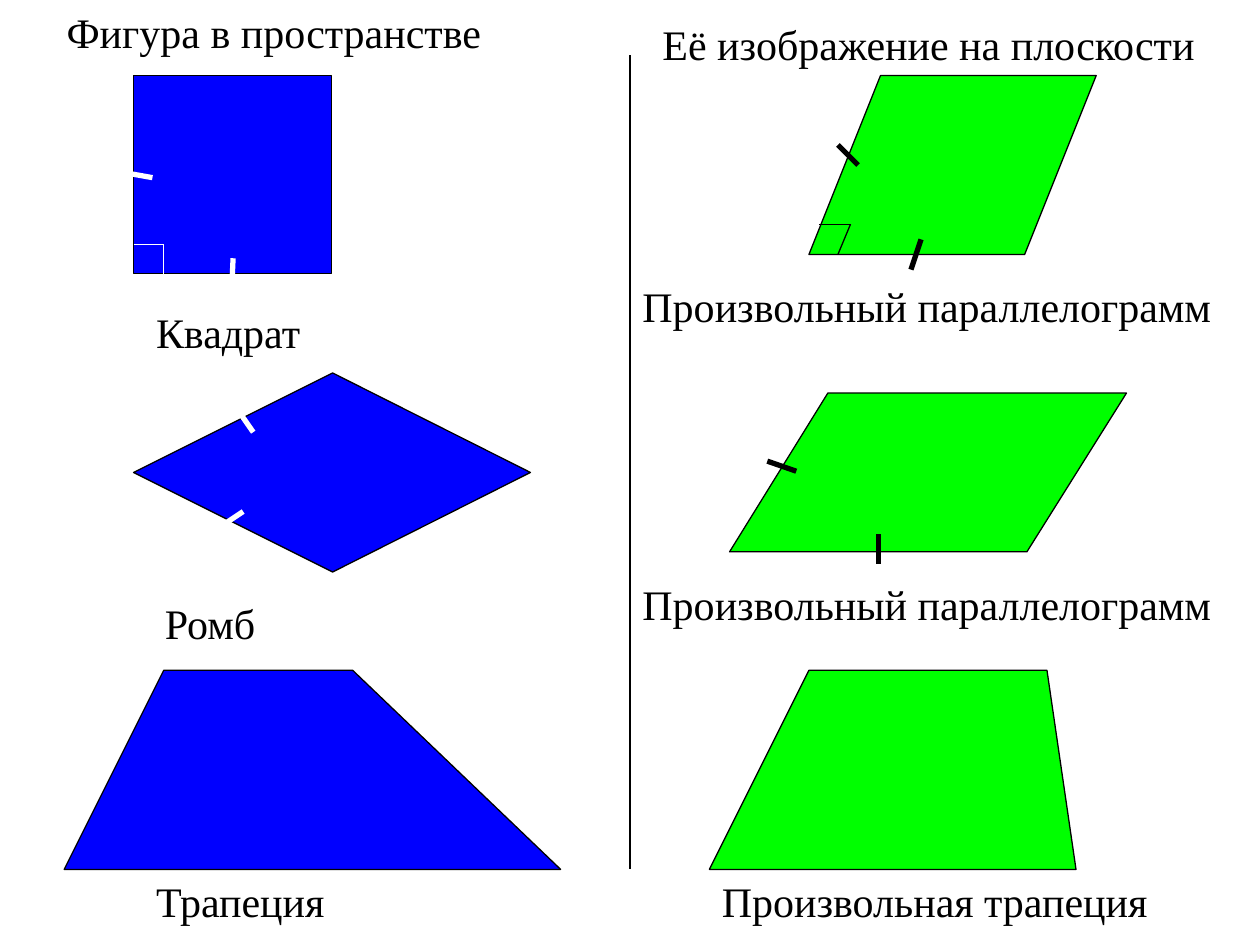
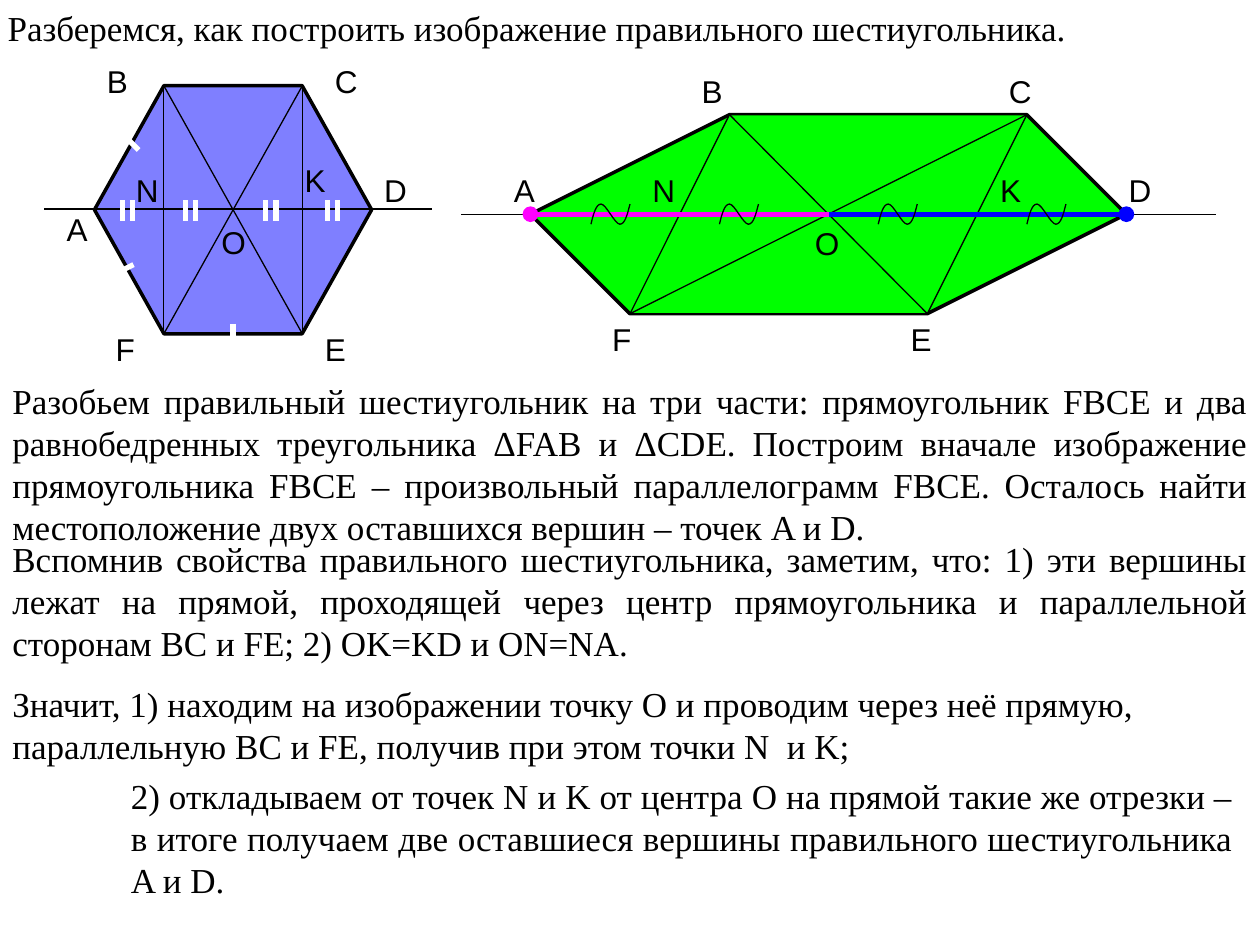
from lxml import etree
from pptx import Presentation
from pptx.dml.color import RGBColor
from pptx.enum.shapes import MSO_CONNECTOR, MSO_SHAPE
from pptx.enum.text import MSO_ANCHOR, PP_ALIGN
from pptx.oxml.ns import qn
from pptx.util import Inches, Pt

STRAIGHT = MSO_CONNECTOR.STRAIGHT
RECTANGLE = MSO_SHAPE.RECTANGLE
PARALLELOGRAM = MSO_SHAPE.PARALLELOGRAM
HEXAGON = MSO_SHAPE.HEXAGON
TOP = MSO_ANCHOR.TOP
LEFT = PP_ALIGN.LEFT
JUSTIFY = PP_ALIGN.JUSTIFY

COLORS = {
    "ink": "000000",
    "mark": "FFFFFF",
    "figure": "0000FF",
    "image": "00FF00",
    "left_half": "FF00FF",
    "right_half": "0000FF",
}
SERIF = "Times New Roman"
SANS = "Arial"
THIN, EDGE, BOLD = 0.75, 2, 3
TITLE_ONLY, BLANK = 5, 6

# Control points of the wavy equality mark, relative to its top left corner
WAVE = [(0, 0.16), (0.02, 0.08), (0.04, 0), (0.08, 0), (0.12, 0),
        (0.19, 0.16), (0.23, 0.16), (0.27, 0.16), (0.29, 0.08), (0.31, 0)]


def rgb(name):
    return RGBColor.from_string(COLORS[name])


def place(shape, left, top, width, height):
    shape.left, shape.top = Inches(left), Inches(top)
    shape.width, shape.height = Inches(width), Inches(height)


def write_text(shape, text, size=20, font=SERIF, align=LEFT):
    frame = shape.text_frame
    frame.word_wrap = True
    frame.vertical_anchor = TOP
    paragraph = frame.paragraphs[0]
    paragraph.alignment = align
    run = paragraph.add_run()
    run.text = text
    run.font.size = Pt(size)
    run.font.name = font
    run.font.color.rgb = rgb("ink")


def add_text(slide, text, left, top, width, height, **text_format):
    box = slide.shapes.add_textbox(0, 0, 0, 0)
    place(box, left, top, width, height)
    write_text(box, text, **text_format)


def add_segment(slide, start, end, color="ink", width=THIN, dots=()):
    """Draw a line; dots lists the ends (headEnd, tailEnd) that carry a point."""
    ends = [Inches(value) for value in (*start, *end)]
    segment = slide.shapes.add_connector(STRAIGHT, *ends)
    segment.line.color.rgb = rgb(color)
    segment.line.width = Pt(width)
    properties = segment.element.spPr
    for dot in dots:
        etree.SubElement(properties.find(qn("a:ln")), qn(f"a:{dot}"), type="oval")
    etree.SubElement(properties, qn("a:effectLst"))


def paint(shape, fill, width):
    shape.shadow.inherit = False
    if fill:
        shape.fill.solid()
        shape.fill.fore_color.rgb = rgb(fill)
    else:
        shape.fill.background()
    shape.line.color.rgb = rgb("ink")
    shape.line.width = Pt(width)


def add_preset(slide, kind, box, fill, adjust=None, width=THIN):
    shape = slide.shapes.add_shape(kind, 0, 0, 0, 0)
    place(shape, *box)
    if adjust is not None:
        shape.adjustments[0] = adjust
    paint(shape, fill, width)
    return shape


def add_outline(slide, points, fill=None, width=THIN, close=True):
    corners = [(Inches(x), Inches(y)) for x, y in points]
    builder = slide.shapes.build_freeform(*corners[0], scale=1.0)
    builder.add_line_segments(corners[1:], close=close)
    paint(builder.convert_to_shape(), fill, width)


def set_opacity(shape, percent):
    fill_color = shape.element.spPr.find(f"{qn('a:solidFill')}/{qn('a:srgbClr')}")
    etree.SubElement(fill_color, qn("a:alpha"), val=str(percent * 1000))


def bezier(controls, steps=8):
    """Sample a chain of cubic curves that share their end points."""
    points = [controls[0]]
    for first in range(0, len(controls) - 1, 3):
        curve = controls[first:first + 4]
        for step in range(1, steps + 1):
            t = step / steps
            weights = ((1 - t) ** 3, 3 * t * (1 - t) ** 2, 3 * t * t * (1 - t), t ** 3)
            points.append(tuple(sum(w * point[axis] for w, point in zip(weights, curve))
                                for axis in (0, 1)))
    return points


def add_wave(slide, left, top):
    add_outline(slide, [(left + x, top + y) for x, y in bezier(WAVE)], close=False)


def add_vertex_labels(slide, labels, width=0.47):
    for letter, (left, top) in labels.items():
        add_text(slide, letter, left, top, width, 0.4, size=18, font=SANS)


def add_diagonals(slide, vertices, names):
    for start, end in names:
        add_segment(slide, vertices[start], vertices[end])


def build_comparison(slide):
    add_segment(slide, (5, 0.44), (5, 6.9))

    add_preset(slide, RECTANGLE, (1.06, 0.6, 1.57, 1.57), "figure")
    add_preset(slide, PARALLELOGRAM, (6.42, 0.6, 2.28, 1.42), "image", 0.4)
    rhombus = [(1.06, 3.75), (2.64, 2.96), (4.21, 3.75), (2.64, 4.54)]
    parallelogram = [(5.79, 4.38), (6.57, 3.12), (8.94, 3.12), (8.15, 4.38)]
    trapezoid = [(0.51, 6.9), (1.3, 5.32), (2.8, 5.32), (4.45, 6.9)]
    trapezoid_image = [(5.63, 6.9), (6.42, 5.32), (8.31, 5.32), (8.54, 6.9)]
    for corners, fill in ((rhombus, "figure"), (parallelogram, "image"),
                          (trapezoid, "figure"), (trapezoid_image, "image")):
        add_outline(slide, corners, fill)

    right_angles = [
        ("mark", (1.06, 1.94), (1.3, 1.94), (1.3, 2.18)),
        ("ink", (6.5, 1.78), (6.75, 1.78), (6.65, 2.02)),
    ]
    for color, side, corner, base in right_angles:
        add_segment(slide, side, corner, color)
        add_segment(slide, corner, base, color)

    equal_sides = {
        "mark": [((0.93, 1.36), (1.21, 1.41)), ((1.85, 2.05), (1.84, 2.27)),
                 ((1.93, 4.06), (1.69, 4.22)), ((1.85, 3.2), (2.01, 3.43))],
        "ink": [((6.65, 1.15), (6.81, 1.31)), ((7.31, 1.9), (7.23, 2.14)),
                ((6.09, 3.66), (6.32, 3.74)), ((6.97, 4.24), (6.97, 4.48))],
    }
    for color, ticks in equal_sides.items():
        for start, end in ticks:
            add_segment(slide, start, end, color, BOLD)

    captions = [
        ("Фигура в пространстве", 0.43, 0, 3.94),
        ("Её изображение на плоскости", 5.16, 0.1, 4.64),
        ("Квадрат", 1.14, 2.38, 2.36),
        ("Произвольный параллелограмм", 5, 2.18, 4.79),
        ("Ромб", 1.21, 4.69, 2.3),
        ("Произвольный параллелограмм", 5, 4.54, 4.79),
        ("Трапеция", 1.14, 6.9, 2.6),
        ("Произвольная трапеция", 5.63, 6.9, 3.78),
    ]
    for text, left, top, width in captions:
        add_text(slide, text, left, top, width, 0.51, size=24)


def draw_regular_hexagon(slide):
    hexagon = add_preset(slide, HEXAGON, (0.75, 0.68, 2.2, 1.97), "figure", 0.28, EDGE)
    set_opacity(hexagon, 50)
    vertices = {"B": (1.3, 0.68), "C": (2.4, 0.68), "E": (2.4, 2.65), "F": (1.3, 2.65)}
    add_diagonals(slide, vertices, ("BF", "CE", "CF", "BE"))
    add_segment(slide, (0.35, 1.66), (3.43, 1.66))

    side_ticks = [((0.98, 1.07), (1.1, 1.19)), ((1.06, 2.1), (0.9, 2.18)),
                  ((1.85, 2.57), (1.85, 2.73))]
    axis_ticks = [((x, 1.59), (x, 1.75))
                  for left in (0.97, 1.47, 2.11, 2.6) for x in (left, left + 0.08)]
    for start, end in side_ticks + axis_ticks:
        add_segment(slide, start, end, "mark", BOLD)

    add_vertex_labels(slide, {
        "A": (0.43, 1.62), "B": (0.75, 0.44), "C": (2.56, 0.44), "D": (2.95, 1.31),
        "E": (2.48, 2.57), "F": (0.82, 2.57), "O": (1.66, 1.72), "K": (2.32, 1.23),
        "N": (0.98, 1.31)})


def draw_hexagon_image(slide):
    axis_y = 1.7
    vertices = {"A": (4.21, axis_y), "B": (5.79, 0.91), "C": (8.15, 0.91),
                "D": (8.94, axis_y), "E": (7.36, 2.49), "F": (5, 2.49)}
    add_outline(slide, list(vertices.values()), "image", EDGE)
    add_preset(slide, PARALLELOGRAM, (5, 0.91, 3.15, 1.58), "image", 0.5)
    add_diagonals(slide, vertices, ("BE", "FC"))
    add_segment(slide, (3.66, axis_y), (9.65, axis_y))

    add_vertex_labels(slide, {
        "A": (3.98, 1.31), "B": (5.47, 0.52), "C": (7.91, 0.52), "D": (8.86, 1.31),
        "E": (7.13, 2.49), "F": (4.76, 2.49), "O": (6.37, 1.73), "K": (7.84, 1.31),
        "N": (5.08, 1.31)})

    center = (6.58, axis_y)
    add_segment(slide, center, vertices["D"], "right_half", BOLD, ["tailEnd"])
    add_segment(slide, vertices["A"], center, "left_half", BOLD, ["headEnd"])
    for left in (4.69, 5.71, 6.97, 8.15):
        add_wave(slide, left, 1.62)


def build_hexagon_construction(slide):
    title = slide.shapes.title
    place(title, -0.04, 0, 10, 0.44)
    write_text(title, "Разберемся, как построить изображение правильного шестиугольника.")

    draw_regular_hexagon(slide)
    draw_hexagon_image(slide)

    explanation = [
        ("Разобьем правильный шестиугольник на три части: прямоугольник FBCE и два "
         "равнобедренных треугольника ΔFAB и ΔCDE. Построим вначале изображение "
         "прямоугольника FBCE – произвольный параллелограмм FBCE. Осталось найти "
         "местоположение двух оставшихся вершин – точек A и D.",
         0, 2.96, 10, 1.45, JUSTIFY),
        ("Вспомнив свойства правильного шестиугольника, заметим, что: 1) эти вершины "
         "лежат на прямой, проходящей через центр прямоугольника и параллельной "
         "сторонам BC и FE; 2) OK=KD и ON=NA.",
         0, 4.22, 10, 1.11, JUSTIFY),
        ("Значит, 1) находим на изображении точку О и проводим через неё прямую, "
         "параллельную BC и FE, получив при этом точки N  и K;",
         0, 5.37, 10, 0.77, LEFT),
        ("2) откладываем от точек N и K от центра О на прямой такие же отрезки – "
         "в итоге получаем две оставшиеся вершины правильного шестиугольника A и D.",
         0.94, 6.1, 8.94, 1.11, JUSTIFY),
    ]
    for text, left, top, width, height, align in explanation:
        add_text(slide, text, left, top, width, height, align=align)


def main():
    deck = Presentation()
    deck.slide_width, deck.slide_height = Inches(10), Inches(7.5)
    for layout, build in ((BLANK, build_comparison),
                          (TITLE_ONLY, build_hexagon_construction)):
        build(deck.slides.add_slide(deck.slide_layouts[layout]))
    deck.save("out.pptx")


if __name__ == "__main__":
    main()
